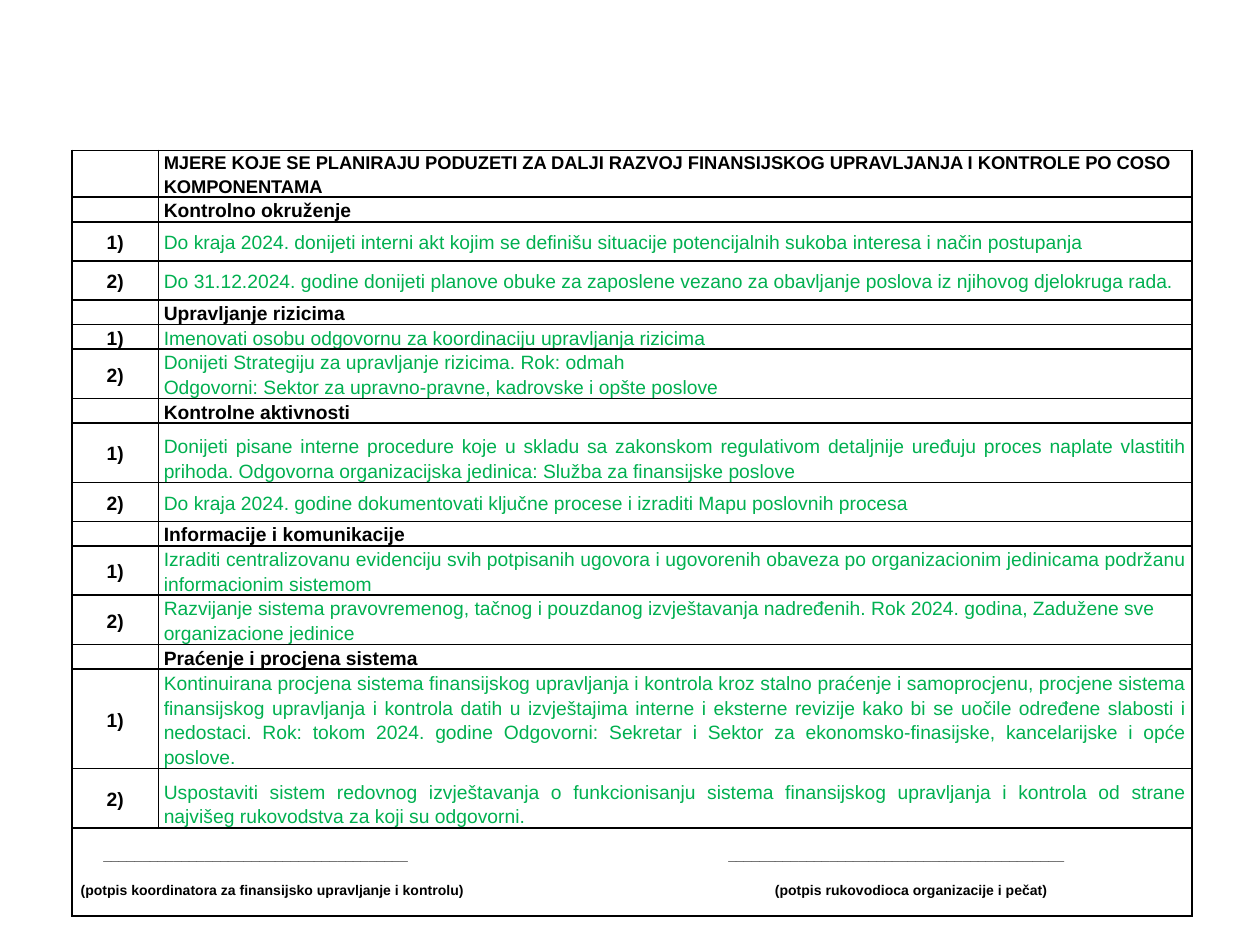
import dataclasses

import lxml.etree
import pptx
import pptx.dml.color
import pptx.enum.text
import pptx.oxml.ns
import pptx.util

ALIGN = pptx.enum.text.PP_ALIGN
ANCHOR = pptx.enum.text.MSO_ANCHOR


@dataclasses.dataclass(frozen=True)
class Theme:
    """Hold the colours, font and type sizes of the deck."""
    font: str = "Arial"
    ink: str = "000000"
    measure: str = "00B050"
    title: float = 10.5
    body: float = 11
    signature: float = 8
    border: float = 1
    line_spacing: float = 1.15
    space_after: float = 10


THEME = Theme()
COLUMN_WEIGHTS = (0.69, 8.2)
HEADING_WEIGHT = 0.18
TITLE_WEIGHT = 0.37
SIGNATURE_WEIGHT = 0.7
TITLE = ("MJERE KOJE SE PLANIRAJU PODUZETI ZA DALJI RAZVOJ FINANSIJSKOG "
         "UPRAVLJANJA I KONTROLE PO COSO KOMPONENTAMA")

SECTIONS = (
    ("Kontrolno okruženje", (
        (0.31, ANCHOR.MIDDLE, ALIGN.LEFT,
         "Do kraja 2024. donijeti interni akt kojim se definišu situacije "
         "potencijalnih sukoba interesa i način postupanja"),
        (0.31, ANCHOR.MIDDLE, ALIGN.JUSTIFY,
         "Do 31.12.2024. godine donijeti planove obuke za zaposlene vezano za "
         "obavljanje poslova iz njihovog djelokruga rada."))),
    ("Upravljanje rizicima", (
        (0.18, ANCHOR.MIDDLE, ALIGN.LEFT,
         "Imenovati osobu odgovornu za koordinaciju upravljanja rizicima"),
        (0.38, ANCHOR.BOTTOM, ALIGN.LEFT,
         "Donijeti Strategiju za upravljanje rizicima. Rok: odmah\v"
         "Odgovorni: Sektor za upravno-pravne, kadrovske i opšte poslove"))),
    ("Kontrolne aktivnosti", (
        (0.47, ANCHOR.BOTTOM, ALIGN.JUSTIFY,
         "Donijeti pisane interne procedure koje u skladu sa zakonskom "
         "regulativom detaljnije uređuju proces naplate vlastitih prihoda. "
         "Odgovorna organizacijska jedinica: Služba za finansijske poslove"),
        (0.31, ANCHOR.MIDDLE, ALIGN.LEFT,
         "Do kraja 2024. godine dokumentovati ključne procese i izraditi Mapu "
         "poslovnih procesa"))),
    ("Informacije i komunikacije", (
        (0.38, ANCHOR.BOTTOM, ALIGN.JUSTIFY,
         "Izraditi centralizovanu evidenciju svih potpisanih ugovora i "
         "ugovorenih obaveza po organizacionim jedinicama podržanu "
         "informacionim sistemom"),
        (0.38, ANCHOR.BOTTOM, ALIGN.LEFT,
         "Razvijanje sistema pravovremenog, tačnog i pouzdanog izvještavanja "
         "nadređenih. Rok 2024. godina, Zadužene sve organizacione jedinice"))),
    ("Praćenje i procjena sistema", (
        (0.79, ANCHOR.BOTTOM, ALIGN.JUSTIFY,
         "Kontinuirana procjena sistema finansijskog upravljanja i kontrola "
         "kroz stalno praćenje i samoprocjenu, procjene sistema finansijskog "
         "upravljanja i kontrola datih u izvještajima interne i eksterne "
         "revizije kako bi se uočile određene slabosti i nedostaci. Rok: tokom "
         "2024. godine Odgovorni: Sekretar i Sektor za ekonomsko-finasijske, "
         "kancelarijske i opće poslove."),
        (0.47, ANCHOR.BOTTOM, ALIGN.JUSTIFY,
         "Uspostaviti sistem redovnog izvještavanja o funkcionisanju sistema "
         "finansijskog upravljanja i kontrola od strane najvišeg rukovodstva "
         "za koji su odgovorni."))),
)

SIGNATURES = (
    (("_" * 39, 0.21), ("_" * 43, 5.17)),
    (("(potpis koordinatora za finansijsko upravljanje i kontrolu)", 0.03),
     ("(potpis rukovodioca organizacije i pečat)", 5.54)),
)


def add_element(parent, tag, **attributes):
    """Append a drawing element with the given attributes."""
    return lxml.etree.SubElement(parent, pptx.oxml.ns.qn(tag), **attributes)


def write_para(para, text, size=THEME.body, color=THEME.ink, bold=True,
               align=ALIGN.LEFT):
    """Fill a paragraph and set its spacing and font."""
    para.text = text
    para.alignment = align
    para.line_spacing = THEME.line_spacing
    para.space_after = pptx.util.Pt(THEME.space_after)
    font = para.font
    font.name, font.size, font.bold = THEME.font, pptx.util.Pt(size), bold
    font.color.rgb = pptx.dml.color.RGBColor.from_string(color)
    if not text:
        add_element(para._p, "a:endParaRPr", sz=str(int(size * 100)))


def style_cell(cell):
    """Give a cell its margins, empty fill and four borders."""
    cell.margin_left = cell.margin_right = pptx.util.Inches(0.04)
    cell.margin_top = cell.margin_bottom = 0
    cell.fill.background()
    properties = cell._tc.get_or_add_tcPr()
    for index, side in enumerate("LRTB"):
        line = add_element(properties, f"a:ln{side}",
                           w=str(pptx.util.Pt(THEME.border)))
        add_element(add_element(line, "a:solidFill"), "a:srgbClr", val=THEME.ink)
        properties.insert(index, line)


def write_row(row, number, text, anchor=ANCHOR.BOTTOM, **style):
    """Write the number cell and the text cell of one row."""
    number_cell, text_cell = row.cells
    number_cell.vertical_anchor = ANCHOR.MIDDLE
    text_cell.vertical_anchor = anchor
    write_para(number_cell.text_frame.paragraphs[0], number, align=ALIGN.CENTER)
    write_para(text_cell.text_frame.paragraphs[0], text, **style)


def write_signatures(row):
    """Merge the last row and set the signature lines on tab stops."""
    cell, last_cell = row.cells
    cell.merge(last_cell)
    cell.vertical_anchor = ANCHOR.MIDDLE
    frame = cell.text_frame
    frame.add_paragraph()
    for para, parts in zip(frame.paragraphs, SIGNATURES):
        tabs = add_element(para._p.get_or_add_pPr(), "a:tabLst")
        for _, stop in parts:
            add_element(tabs, "a:tab", pos=str(pptx.util.Inches(stop)), algn="l")
        write_para(para, "".join(f"\t{text}" for text, _ in parts),
                   size=THEME.signature)


def add_measures_table(page, box):
    """Place the table of planned measures in the given box."""
    left, top, width, height = box
    weights = [TITLE_WEIGHT]
    for _, measures in SECTIONS:
        weights += [HEADING_WEIGHT, *(measure[0] for measure in measures)]
    weights.append(SIGNATURE_WEIGHT)
    table = page.shapes.add_table(len(weights), len(COLUMN_WEIGHTS),
                                  left, top, width, height).table
    table.first_row = table.horz_banding = False
    for column, weight in zip(table.columns, COLUMN_WEIGHTS):
        column.width = int(width * weight / sum(COLUMN_WEIGHTS))
    for row, weight in zip(table.rows, weights):
        row.height = int(height * weight / sum(weights))
    for cell in table.iter_cells():
        style_cell(cell)
    rows = iter(table.rows)
    write_row(next(rows), "", TITLE, size=THEME.title)
    for heading, measures in SECTIONS:
        write_row(next(rows), "", heading)
        for number, (_, anchor, align, text) in enumerate(measures, 1):
            write_row(next(rows), f"{number})", text, anchor, align=align,
                      color=THEME.measure, bold=False)
    write_signatures(next(rows))


def main():
    """Build the deck with its single page."""
    deck = pptx.Presentation()
    deck.slide_width, deck.slide_height = pptx.util.Inches(10), pptx.util.Inches(7.5)
    page = deck.slides.add_slide(deck.slide_layouts[6])
    wide, high = deck.slide_width, deck.slide_height
    box = [int(share * size) for share, size in
           zip((0.057, 0.159, 0.889, 0.793), (wide, high, wide, high))]
    add_measures_table(page, box)
    deck.save("out.pptx")


if __name__ == "__main__":
    main()
